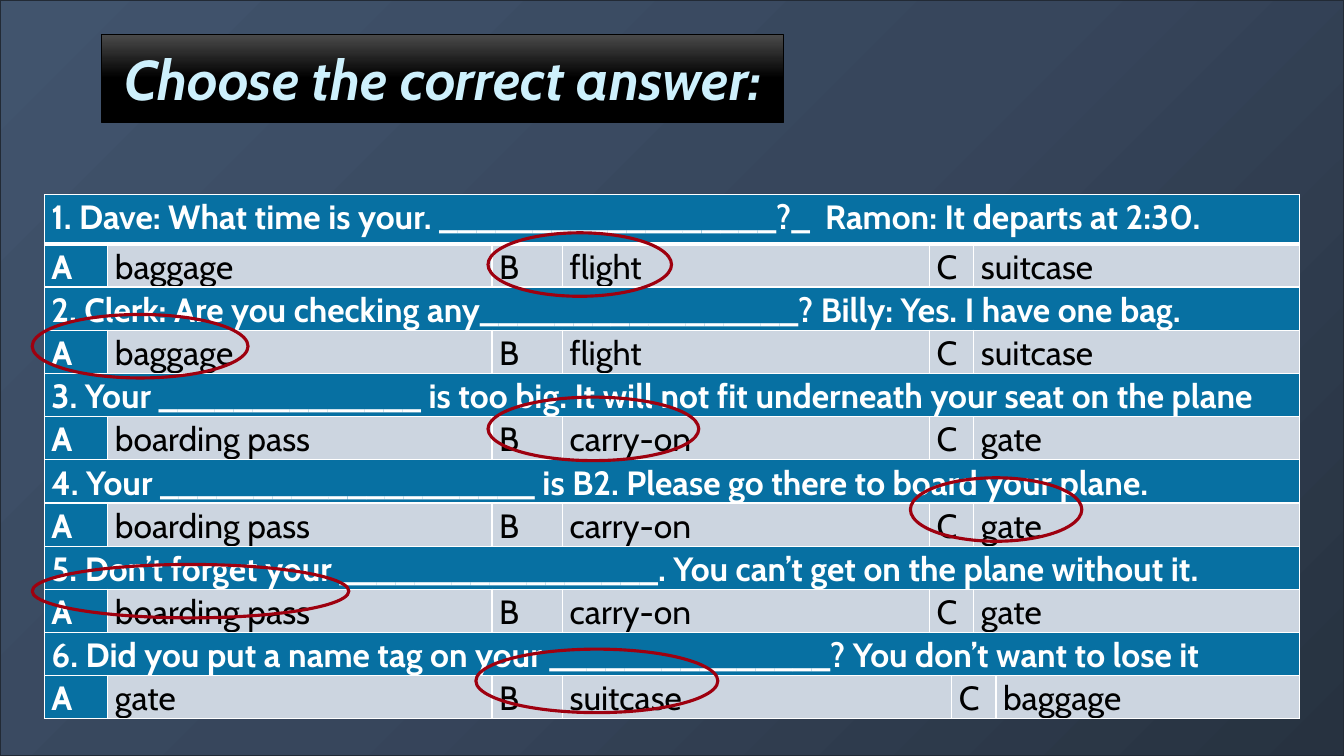
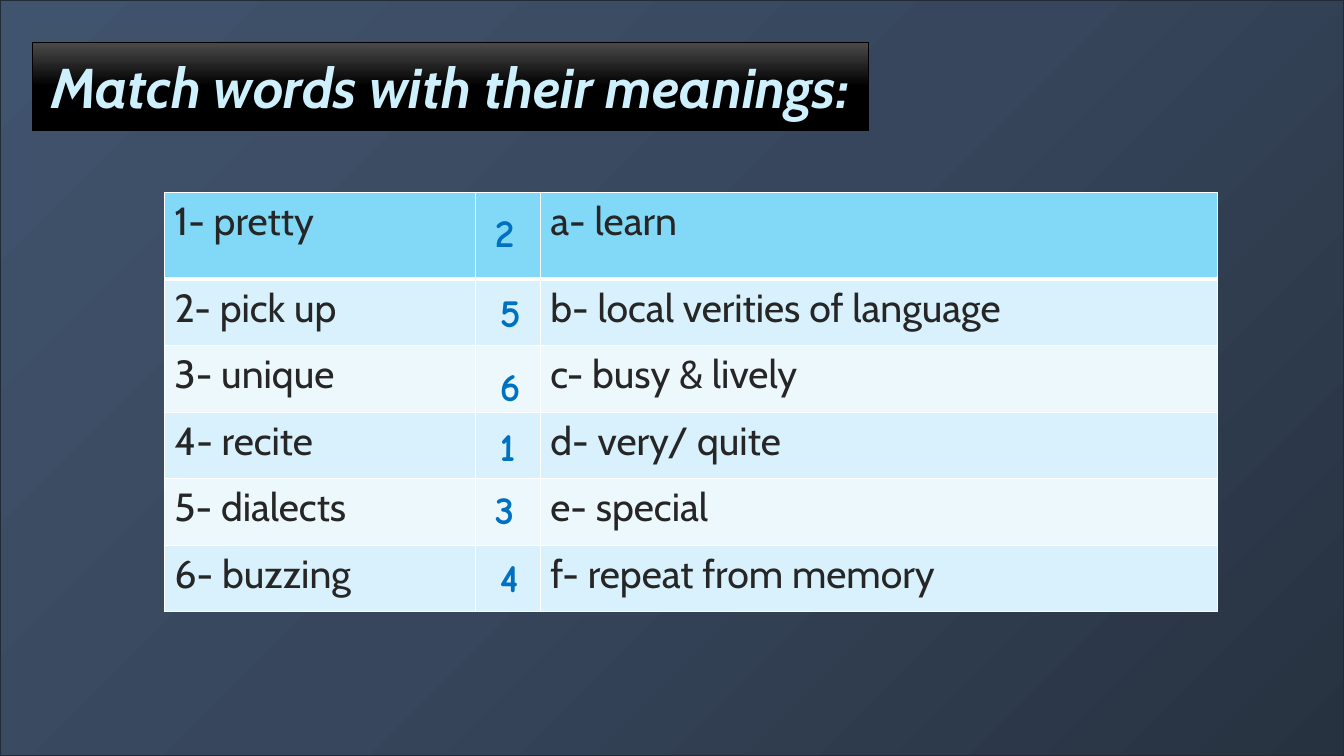
from pptx import Presentation
from pptx.dml.color import RGBColor
from pptx.enum import shapes, text
from pptx.oxml import parse_xml
from pptx.oxml.ns import nsdecls, qn
from pptx.util import Inches, Pt

# Shared look
FONT, ANSWER_FONT = "Cabin", "Comic Neue"
WHITE, BLACK, INK = "FFFFFF", "000000", "262626"
BACKDROP, BACKDROP_LINE = [(0, "273240"), (50, "37465C"), (100, "41546D")], "222A35"
TITLE_BAND = [(0, "4B4B4B"), (50, BLACK), (100, BLACK)]
TITLE_TEXT, TITLE_OUTLINE = "CDF0FC", "82D9F7"
QUESTION_FILL, OPTION_FILL, CIRCLE = "0770A2", "CCD5E0", "9E000F"
HEADER_FILL, BAND_FILLS, ANSWER = "82D9F7", ("EDF8FD", "D8F1FC"), "0070C0"
FOCUS_BOTTOM_RIGHT = '<a:path path="circle"><a:fillToRect l="100000" t="100000"/></a:path>'
DOWNWARD = '<a:lin ang="5400000" scaled="0"/>'

# Question, options, circle round the right answer (left, top, width, height)
QUIZ = [
    ("1. Dave: What time is your. __________________?_  Ramon: It departs at 2:30.",
     ("baggage", "flight", "suitcase"), (4.84, 2.31, 1.82, 0.63)),
    ("2. Clerk: Are you checking any_________________? Billy: Yes. I have one bag.",
     ("baggage", "flight", "suitcase"), (0.32, 3.12, 2.14, 0.63)),
    ("3. Your ______________ is too big. It will not fit underneath your seat on the plane",
     ("boarding pass", "carry-on", "gate"), (4.84, 3.94, 2.09, 0.63)),
    ("4. Your ____________________ is B2. Please go there to board your plane.",
     ("boarding pass", "carry-on", "gate"), (9.03, 4.74, 1.7, 0.63)),
    ("5. Don’t forget your _________________. You can’t get on the plane without it.",
     ("boarding pass", "carry-on", "gate"), (0.32, 5.6, 3.14, 0.53)),
    ("6. Did you put a name tag on your _______________? You don’t want to lose it",
     ("gate", "suitcase", "baggage"), (4.72, 6.44, 2.4, 0.63)),
]
QUIZ_COLUMNS = [0.63, 3.81, 0.7, 3.64, 0.22, 0.22, 0.22, 3.01]
QUIZ_ROWS = [0.49, 0.38] + [0.37] * 10
# First and last column of: A, option, B, option, C, option
OPTION_SPANS = [(0, 0), (1, 1), (2, 2), (3, 3), (4, 5), (6, 7)]
LAST_OPTION_SPANS = [(0, 0), (1, 1), (2, 2), (3, 4), (5, 6), (7, 7)]

# Word, meaning, matching number and its place (left, top)
MATCHES = [
    ("1- pretty", "a- learn", "2", (4.81, 2.02)),
    ("2- pick up", "b- local verities of language", "5", (4.86, 2.81)),
    ("3- unique", "c- busy & lively", "6", (4.86, 3.55)),
    ("4- recite", "d- very/ quite", "1", (4.86, 4.14)),
    ("5- dialects", "e- special", "3", (4.81, 4.77)),
    ("6- buzzing", "f- repeat from memory", "4", (4.86, 5.44)),
]
MATCH_COLUMNS = [3.09, 0.64, 6.72]
MATCH_ROWS = [0.86] + [0.66] * 5


def color(value):
    return RGBColor.from_string(value)


def add_run(paragraph, words, size, ink, bold=False, font=FONT):
    run = paragraph.add_run()
    run.text = words
    run.font.name, run.font.size, run.font.bold = font, Pt(size), bold
    run.font.color.rgb = color(ink)
    return run


def set_line(shape, ink, width):
    shape.line.color.rgb = color(ink)
    shape.line.width = Pt(width)


def set_gradient(shape, stops, direction):
    shape.fill.gradient()
    plain = shape._element.spPr.find(qn("a:gradFill"))
    marks = "".join(f'<a:gs pos="{at * 1000}"><a:srgbClr val="{ink}"/></a:gs>' for at, ink in stops)
    plain.getparent().replace(plain, parse_xml(
        f'<a:gradFill {nsdecls("a")} rotWithShape="1"><a:gsLst>{marks}</a:gsLst>{direction}</a:gradFill>'))


def add_slide(prs, title, box):
    slide = prs.slides.add_slide(prs.slide_layouts[5])
    # Backdrop, behind everything
    backdrop = slide.shapes.add_shape(shapes.MSO_SHAPE.RECTANGLE, 0, 0, prs.slide_width, prs.slide_height)
    backdrop.shadow.inherit = False
    set_gradient(backdrop, BACKDROP, FOCUS_BOTTOM_RIGHT)
    set_line(backdrop, BACKDROP_LINE, 1)
    slide.shapes._spTree.insert(2, backdrop._element)
    # Title band
    band = slide.shapes.title
    band.left, band.top, band.width, band.height = map(Inches, box)
    set_gradient(band, TITLE_BAND, DOWNWARD)
    set_line(band, BLACK, 0.5)
    frame = band.text_frame
    frame.margin_left = frame.margin_right = Inches(0.13)
    frame.margin_top = frame.margin_bottom = Inches(0.07)
    frame.word_wrap = False
    frame.auto_size = text.MSO_AUTO_SIZE.SHAPE_TO_FIT_TEXT
    frame.vertical_anchor = text.MSO_ANCHOR.MIDDLE
    frame.paragraphs[0].alignment = text.PP_ALIGN.CENTER
    run = add_run(frame.paragraphs[0], title, 40, TITLE_TEXT, True)
    run.font.italic = True
    run.font._element.insert(0, parse_xml(
        f'<a:ln {nsdecls("a")} w="{Pt(1.75)}"><a:solidFill><a:srgbClr val="{TITLE_OUTLINE}"/>'
        '</a:solidFill></a:ln>'))
    return slide


def add_grid(slide, left, top, columns, rows):
    size = map(Inches, (left, top, sum(columns), sum(rows)))
    grid = slide.shapes.add_table(len(rows), len(columns), *size).table
    grid.first_row = grid.horz_banding = False
    for column, width in zip(grid.columns, columns):
        column.width = Inches(width)
    for row, height in zip(grid.rows, rows):
        row.height = Inches(height)
    return grid


def style_cell(grid, row, column, fill):
    cell = grid.cell(row, column)
    cell.fill.solid()
    cell.fill.fore_color.rgb = color(fill)
    # White rules, heavier below the first row
    widths = {"L": 1, "R": 1, "T": 3 if row == 1 else 1, "B": 3 if row == 0 else 1}
    for place, (side, width) in enumerate(widths.items()):
        cell._tc.tcPr.insert(place, parse_xml(
            f'<a:ln{side} {nsdecls("a")} w="{Pt(width)}"><a:solidFill>'
            f'<a:srgbClr val="{WHITE}"/></a:solidFill></a:ln{side}>'))
    return cell


def fill_quiz_row(grid, row, words, spans):
    for index, (entry, (first, last)) in enumerate(zip(words, spans)):
        strong = index == 0
        for column in range(first, last + 1):
            style_cell(grid, row, column, QUESTION_FILL if strong else OPTION_FILL)
        cell = grid.cell(row, first)
        if last > first:
            cell.merge(grid.cell(row, last))
        cell.margin_left = cell.margin_right = Inches(0.07)
        cell.margin_top = cell.margin_bottom = 0
        paragraph = cell.text_frame.paragraphs[0]
        paragraph.line_spacing, paragraph.space_after = 1.07, Pt(8)
        add_run(paragraph, entry, 24, WHITE if strong else BLACK, strong)


def build_quiz(prs):
    slide = add_slide(prs, "Choose the correct answer:", (1.01, 0.37, 6.76, 0.81))
    grid = add_grid(slide, 0.44, 1.93, QUIZ_COLUMNS, QUIZ_ROWS)
    for index, (question, (a, b, c), circle) in enumerate(QUIZ):
        spans = LAST_OPTION_SPANS if index == len(QUIZ) - 1 else OPTION_SPANS
        fill_quiz_row(grid, 2 * index, [question], [(0, len(QUIZ_COLUMNS) - 1)])
        fill_quiz_row(grid, 2 * index + 1, ["A", a, "B", b, "C", c], spans)
        ring = slide.shapes.add_shape(shapes.MSO_SHAPE.OVAL, *map(Inches, circle))
        ring.shadow.inherit = False
        ring.fill.background()
        set_line(ring, CIRCLE, 2.25)


def build_matching(prs):
    slide = add_slide(prs, "Match words with their meanings:", (0.32, 0.45, 8.29, 0.81))
    grid = add_grid(slide, 1.63, 1.91, MATCH_COLUMNS, MATCH_ROWS)
    for row, (word, meaning, number, place) in enumerate(MATCHES):
        fill = BAND_FILLS[row % 2] if row else HEADER_FILL
        for column, entry in enumerate((word, "", meaning)):
            cell = style_cell(grid, row, column, fill)
            if entry:
                add_run(cell.text_frame.paragraphs[0], entry, 28, INK)
        answer = slide.shapes.add_textbox(*map(Inches, (*place, 0.45, 0.57))).text_frame
        answer.word_wrap = True
        answer.auto_size = text.MSO_AUTO_SIZE.SHAPE_TO_FIT_TEXT
        answer.paragraphs[0].space_before = Pt(1)
        add_run(answer.paragraphs[0], number, 28, ANSWER, True, ANSWER_FONT)


def main():
    prs = Presentation()
    prs.slide_width, prs.slide_height = Inches(13.33), Inches(7.5)
    build_quiz(prs)
    build_matching(prs)
    prs.save("out.pptx")


if __name__ == "__main__":
    main()
